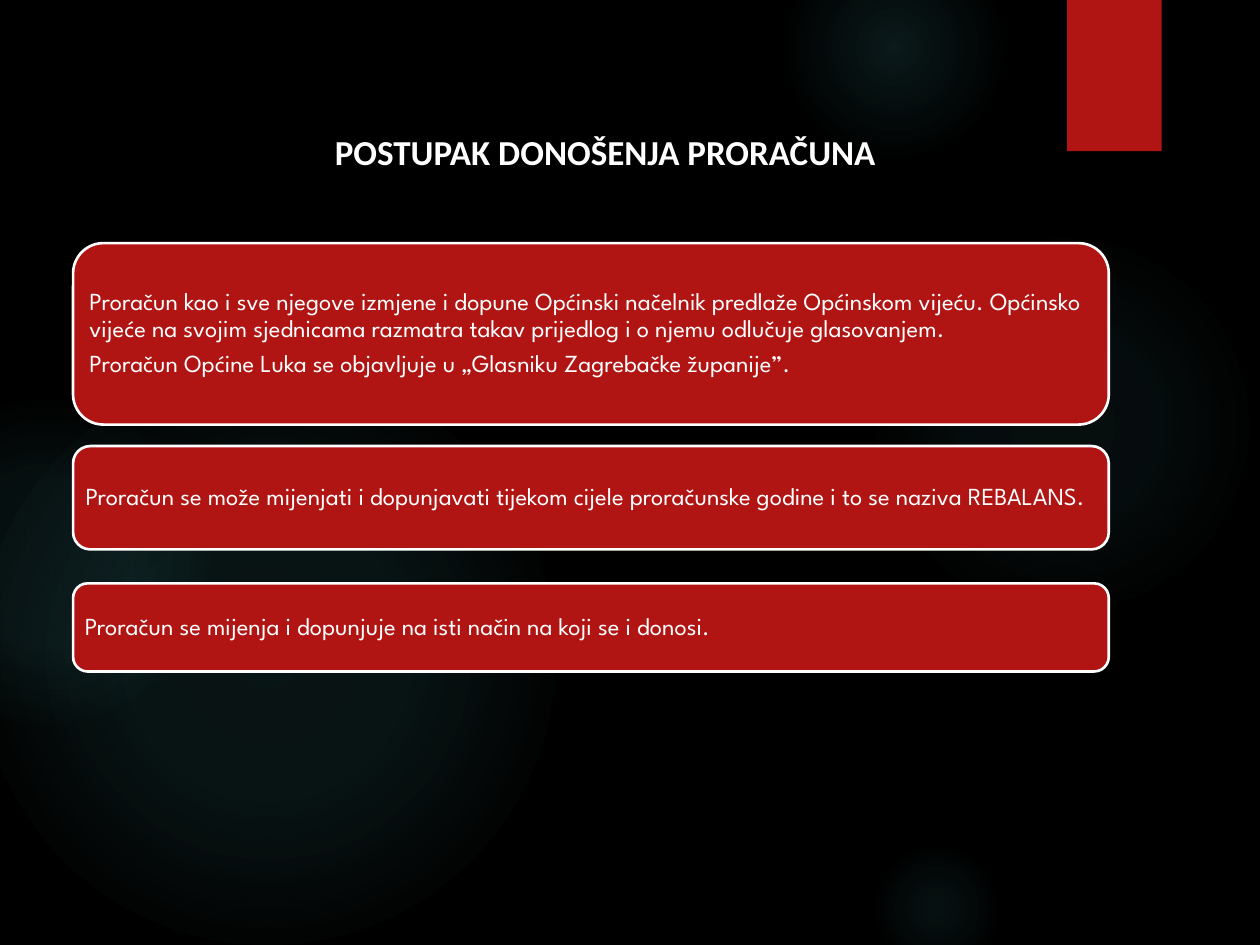
from lxml import etree
from pptx import Presentation
from pptx.dml.color import RGBColor
from pptx.enum.shapes import MSO_SHAPE
from pptx.enum.text import MSO_ANCHOR, PP_ALIGN
from pptx.oxml import parse_xml
from pptx.oxml.ns import nsdecls, qn
from pptx.util import Inches, Pt

OVAL, RECT, ROUND = MSO_SHAPE.OVAL, MSO_SHAPE.RECTANGLE, MSO_SHAPE.ROUNDED_RECTANGLE
MIDDLE = MSO_ANCHOR.MIDDLE
LEFT, CENTER = PP_ALIGN.LEFT, PP_ALIGN.CENTER

BLACK, WHITE, RED, TEAL = "000000", "FFFFFF", "B01513", "50B9C1"

# left, top, size, then (position %, opacity %) stops
GLOWS = [
    (6.89, 1.83, 3.08, [(0, 7), (36, 6), (69, 0)]),
    (6.22, -0.5, 1.75, [(0, 14), (36, 7), (73, 0)]),
    (6.89, 6.67, 1.08, [(0, 9), (36, 5), (66, 0)]),
    (-0.17, 2.92, 4.58, [(0, 11), (36, 10), (75, 0)]),
    (-0.92, 3.17, 2.58, [(0, 8), (36, 8), (72, 0)]),
]

# top, height, paragraphs
CARDS = [
    (1.93, 1.44, [
        "Proračun kao i sve njegove izmjene i dopune Općinski načelnik predlaže "
        "Općinskom vijeću. Općinsko vijeće na svojim sjednicama razmatra takav "
        "prijedlog i o njemu odlučuje glasovanjem.",
        "Proračun Općine Luka se objavljuje u „Glasniku Zagrebačke županije”."]),
    (3.54, 0.82, [
        "Proračun se može mijenjati i dopunjavati tijekom cijele proračunske "
        "godine i to se naziva REBALANS."]),
    (4.63, 0.7, [
        "Proračun se mijenja i dopunjuje na isti način na koji se i donosi."]),
]


def color(code):
    return RGBColor.from_string(code)


def style(font, name, size, bold=False):
    font.name, font.size, font.bold = name, Pt(size), bold
    font.color.rgb = color(WHITE)


def add_shape(slide, kind, left, top, width, height, fill=RED):
    shape = slide.shapes.add_shape(
        kind, Inches(left), Inches(top), Inches(width), Inches(height))
    shape.shadow.inherit = False
    shape.fill.solid()
    shape.fill.fore_color.rgb = color(fill)
    shape.line.fill.background()
    return shape


def add_glow(slide, left, top, size, stops):
    shape = add_shape(slide, OVAL, left, top, size, size, TEAL)
    marks = "".join(
        f'<a:gs pos="{pos * 1000}"><a:srgbClr val="{TEAL}">'
        f'<a:alpha val="{alpha * 1000}"/></a:srgbClr></a:gs>'
        for pos, alpha in stops)
    grad = parse_xml(
        f'<a:gradFill {nsdecls("a")} rotWithShape="1"><a:gsLst>{marks}</a:gsLst>'
        '<a:path path="circle"><a:fillToRect l="50000" t="50000" r="50000" '
        'b="50000"/></a:path></a:gradFill>')
    props = shape.element.spPr
    props.replace(props.find(qn("a:solidFill")), grad)


def add_ribbon(slide):
    shape = add_shape(slide, RECT, 8.47, 0, 0.75, 1.2)
    effects = shape.element.spPr.find(qn("a:effectLst"))
    shade = etree.SubElement(
        effects, qn("a:outerShdw"), blurRad=str(Pt(3)), dist=str(Pt(2)),
        dir="5400000", rotWithShape="0")
    tint = etree.SubElement(shade, qn("a:srgbClr"), val=BLACK)
    etree.SubElement(tint, qn("a:alpha"), val="45000")


def add_card(slide, top, height, lines):
    card = add_shape(slide, ROUND, 0.58, top, 8.22, height)
    card.line.color.rgb = color(WHITE)
    card.line.width = Pt(1.5)
    frame = card.text_frame
    frame.word_wrap = True
    frame.vertical_anchor = MIDDLE
    frame.margin_left = frame.margin_right = Inches(0.06)
    frame.margin_top = frame.margin_bottom = Inches(0.06)
    frame.text = "\n".join(lines)
    for para in frame.paragraphs:
        para.alignment = LEFT
        para.line_spacing = 0.9
        para.space_after = Pt(5)
        style(para.runs[0].font, "League Spartan", 14)


def set_title(slide, text):
    title = slide.shapes.title
    title.left, title.top = Inches(1.69), Inches(0.98)
    title.width, title.height = Inches(6.23), Inches(0.44)
    frame = title.text_frame
    frame.text = text
    frame.vertical_anchor = MIDDLE
    para = frame.paragraphs[0]
    para.alignment = CENTER
    style(para.runs[0].font, "Calibri", 20, bold=True)


def main():
    deck = Presentation()
    deck.slide_width, deck.slide_height = Inches(10), Inches(7.5)
    slide = deck.slides.add_slide(deck.slide_layouts[5])

    # Backdrop
    slide.background.fill.solid()
    slide.background.fill.fore_color.rgb = color(BLACK)
    for glow in GLOWS:
        add_glow(slide, *glow)
    add_ribbon(slide)

    # Content
    set_title(slide, "POSTUPAK DONOŠENJA PRORAČUNA")
    for card in CARDS:
        add_card(slide, *card)

    deck.save("out.pptx")


if __name__ == "__main__":
    main()
